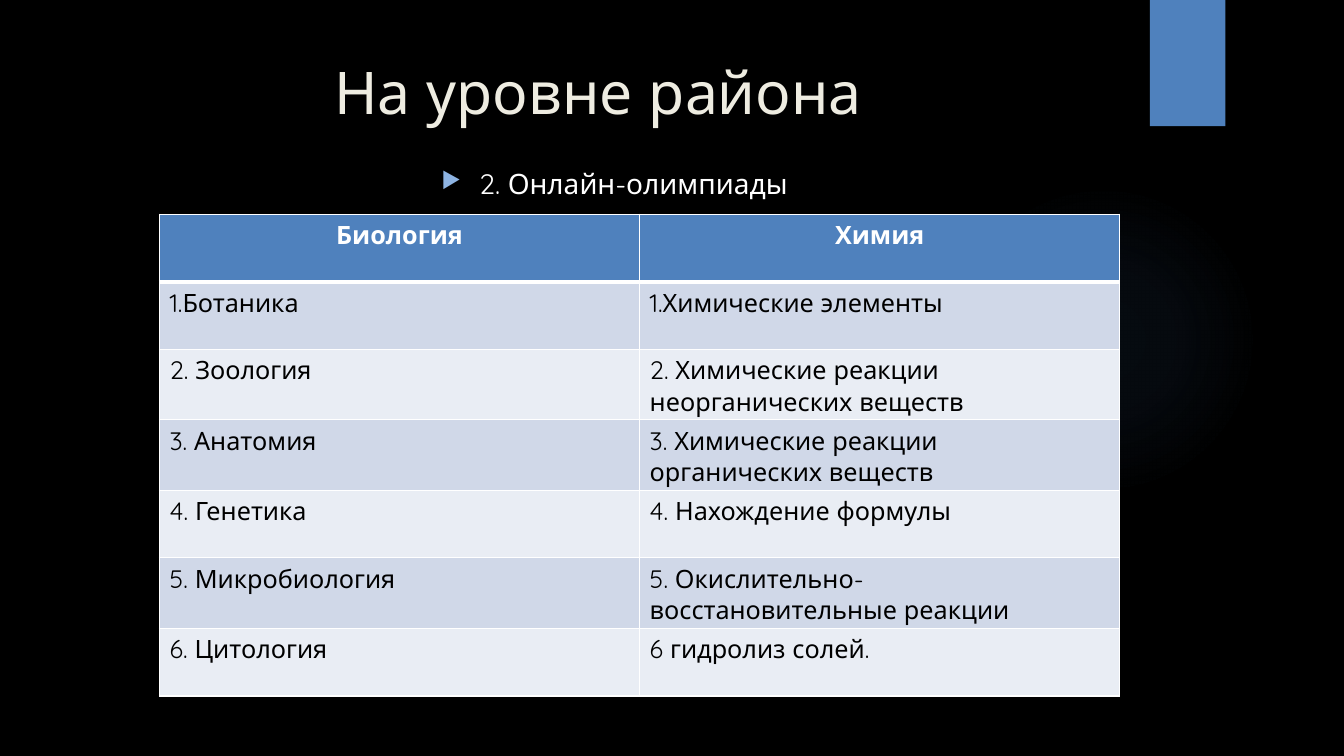
from lxml.etree import SubElement
from pptx import Presentation
from pptx.dml.color import RGBColor
from pptx.enum.shapes import MSO_SHAPE
from pptx.enum.text import MSO_ANCHOR, PP_ALIGN
from pptx.oxml import parse_xml
from pptx.oxml.ns import nsdecls, qn
from pptx.util import Cm, Pt

FONT = "Quicksand"
BLACK = RGBColor(0x00, 0x00, 0x00)
WHITE = RGBColor(0xFF, 0xFF, 0xFF)
CREAM = RGBColor(0xEE, 0xEC, 0xE1)
BLUE = RGBColor(0x4F, 0x81, 0xBD)
BULLET_BLUE = RGBColor(0x8E, 0xB4, 0xE3)
GLOW_BLUE = RGBColor(0x55, 0x8E, 0xD5)
BANDS = [RGBColor(0xD0, 0xD8, 0xE8), RGBColor(0xE9, 0xED, 0xF4)]

ROWS = [
    ("Биология", "Химия"),
    ("1.Ботаника", "1.Химические элементы"),
    ("2. Зоология", "2. Химические реакции неорганических веществ"),
    ("3. Анатомия", "3. Химические реакции органических веществ"),
    ("4. Генетика", "4. Нахождение формулы"),
    ("5. Микробиология", "5. Окислительно-восстановительные реакции"),
    ("6. Цитология", "6 гидролиз солей."),
]


def write(para, text, size, color, bold=False):
    span = para.add_run()
    span.text = text
    span.font.name = FONT
    span.font.size = Pt(size)
    span.font.color.rgb = color
    span.font.bold = bold


def set_border(cell, side, points):
    """Draw a white line on one side (L, R, T or B) of a table cell."""
    properties = cell._tc.get_or_add_tcPr()
    line = parse_xml(
        f'<a:ln{side} {nsdecls("a")} w="{Pt(points)}"><a:solidFill>'
        f'<a:srgbClr val="{WHITE}"/></a:solidFill></a:ln{side}>'
    )
    properties.insert(len(properties.findall("*")) - 1, line)


deck = Presentation()
deck.slide_width = Cm(33.87)
deck.slide_height = Cm(19.05)
page = deck.slides.add_slide(deck.slide_layouts[5])
page.background.fill.solid()
page.background.fill.fore_color.rgb = BLACK

# Faint round glow and the blue tab at the top edge
glow = page.shapes.add_shape(MSO_SHAPE.OVAL, Cm(23.9), Cm(4.65), Cm(7.82), Cm(7.82))
glow.shadow.inherit = False
glow.line.fill.background()
stops = "".join(
    f'<a:gs pos="{place * 1000}"><a:srgbClr val="{GLOW_BLUE}">'
    f'<a:alpha val="{alpha * 1000}"/></a:srgbClr></a:gs>'
    for place, alpha in [(0, 7), (36, 6), (69, 0)]
)
glow_fill = parse_xml(
    f'<a:gradFill {nsdecls("a")}><a:gsLst>{stops}</a:gsLst><a:path path="circle">'
    '<a:fillToRect l="50000" t="50000" r="50000" b="50000"/></a:path></a:gradFill>'
)
glow._element.spPr.find(qn("a:prstGeom")).addnext(glow_fill)

tab = page.shapes.add_shape(MSO_SHAPE.RECTANGLE, Cm(28.98), Cm(0), Cm(1.9), Cm(3.18))
tab.shadow.inherit = False
tab.fill.solid()
tab.fill.fore_color.rgb = BLUE
tab.line.fill.background()

# Title
title = page.shapes.title
title.left, title.top, title.width, title.height = Cm(1.8), Cm(1.27), Cm(26.14), Cm(3.89)
title.text_frame.vertical_anchor = MSO_ANCHOR.TOP
title_para = title.text_frame.paragraphs[0]
title_para.alignment = PP_ALIGN.CENTER
write(title_para, " На уровне района", 42, CREAM)

# Bulleted subtitle
subtitle = page.shapes.add_textbox(Cm(3.07), Cm(4.06), Cm(24.84), Cm(13.31))
subtitle.text_frame.word_wrap = True
subtitle_para = subtitle.text_frame.paragraphs[0]
subtitle_para.alignment = PP_ALIGN.CENTER
bullet = subtitle_para._p.get_or_add_pPr()
bullet.set("marL", str(Cm(0.95)))
bullet.set("indent", str(-Cm(0.95)))
bullet_color = SubElement(bullet, qn("a:buClr"))
SubElement(bullet_color, qn("a:srgbClr"), val=str(BULLET_BLUE))
SubElement(bullet, qn("a:buSzPct"), val="80000")
SubElement(bullet, qn("a:buChar"), char="▶")
write(subtitle_para, "2. Онлайн-олимпиады", 20, WHITE)

# Table of subjects
frame = page.shapes.add_table(len(ROWS), 2, Cm(4.02), Cm(5.4), Cm(24.2), Cm(11.9))
for row_index, row in enumerate(ROWS):
    is_header = row_index == 0
    for column_index, text in enumerate(row):
        cell = frame.table.cell(row_index, column_index)
        cell.fill.solid()
        cell.fill.fore_color.rgb = BLUE if is_header else BANDS[(row_index - 1) % 2]
        for side in "LRTB":
            thick = (is_header and side == "B") or (row_index == 1 and side == "T")
            set_border(cell, side, 3 if thick else 1)
        para = cell.text_frame.paragraphs[0]
        para.alignment = PP_ALIGN.CENTER if is_header else PP_ALIGN.LEFT
        write(para, text, 18, WHITE if is_header else BLACK, is_header)

deck.save("out.pptx")
